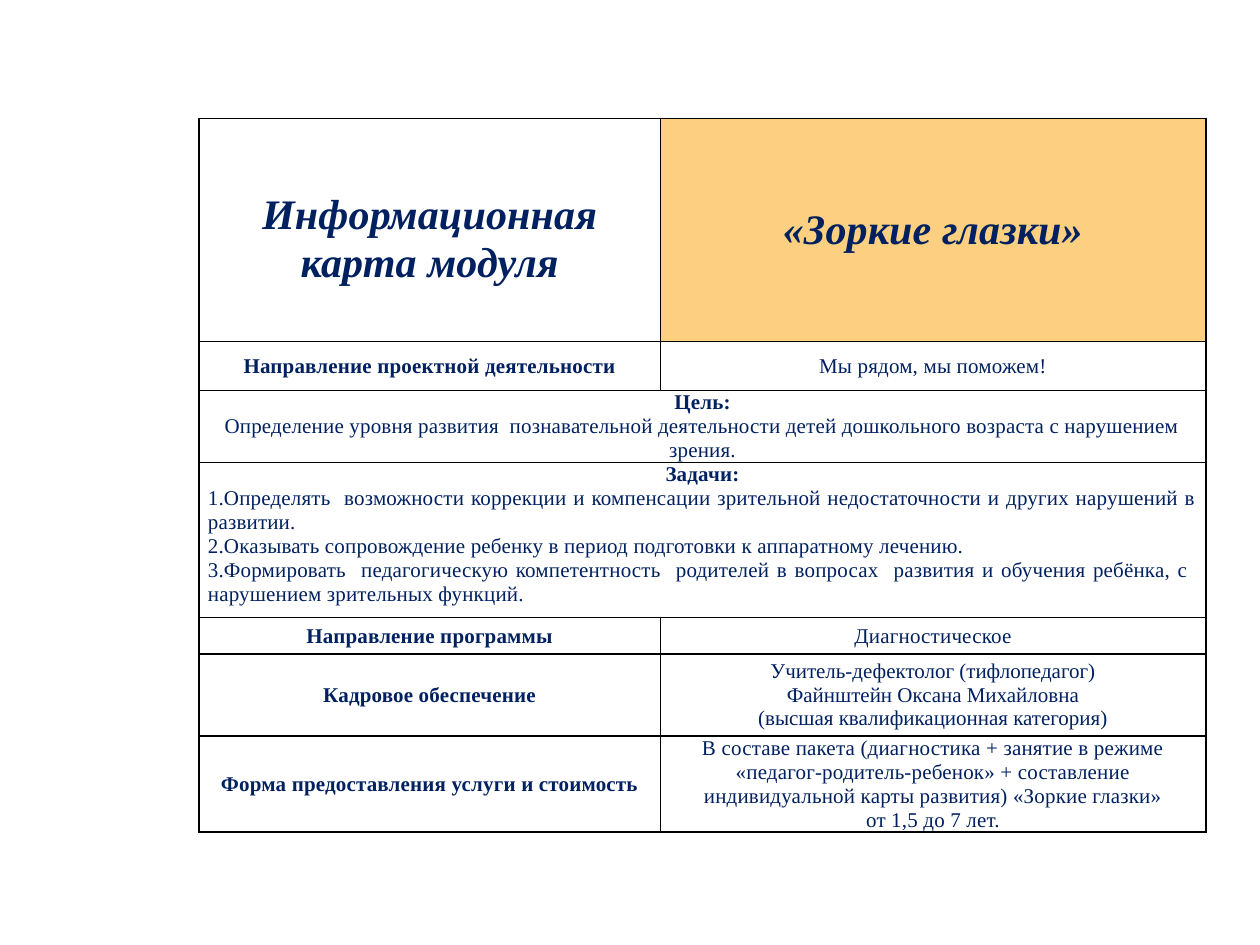
from dataclasses import dataclass

from lxml.etree import SubElement
from pptx import Presentation
from pptx.dml.color import RGBColor
from pptx.enum.text import MSO_ANCHOR as Anchor, PP_ALIGN as Align
from pptx.oxml.ns import qn
from pptx.table import _Cell as Cell
from pptx.util import Pt

FONT = "Times New Roman"
NAVY, BLACK, SAND = "002060", "000000", "FCD080"
LINE = 13.7  # fixed line pitch
HANGING = -18
LEFT, TOP = 113.8, 67.7
COLUMNS = [263.5, 311.8]
ROWS = [127.5, 28, 30.2, 88.5, 21, 46.8, 28]


@dataclass(frozen=True)
class Line:
    text: str
    bold: bool = False
    italic: bool = False
    size: float = 12
    align: Align = Align.CENTER
    before: float = 0
    indent: float = 0


@dataclass(frozen=True)
class Entry:
    row: int
    column: int
    lines: list[Line]
    anchor: Anchor = Anchor.MIDDLE
    top: float = 0
    fill: str = ""
    wide: bool = False
    plain: bool = False  # single spacing, no hanging indent


def title(text: str, before: float = 0, indent: float = 0) -> Line:
    return Line(text, True, True, 24, before=before, indent=indent)


def label(text: str) -> Line:
    return Line(text, bold=True)


def task(text: str) -> Line:
    return Line(text, align=Align.JUSTIFY)


ENTRIES = [
    # Heading row
    Entry(0, 0, [title("Информационная"), title("карта модуля", LINE, 12)],
          Anchor.TOP, top=4 * LINE),
    Entry(0, 1, [title("«Зоркие глазки»")], top=LINE, fill=SAND),
    # Project area
    Entry(1, 0, [label("Направление проектной деятельности")]),
    Entry(1, 1, [Line("Мы рядом, мы поможем!")]),
    # Goal and tasks across both columns
    Entry(2, 0, [
        label("Цель:"),
        Line("Определение уровня развития  познавательной деятельности детей "
             "дошкольного возраста с нарушением зрения."),
    ], Anchor.TOP, wide=True),
    Entry(3, 0, [
        label("Задачи:"),
        task("1.Определять  возможности коррекции и компенсации зрительной "
             "недостаточности и других нарушений в развитии."),
        task("2.Оказывать сопровождение ребенку в период подготовки к "
             "аппаратному лечению."),
        task("3.Формировать  педагогическую компетентность  родителей в "
             "вопросах  развития и обучения ребёнка, с  нарушением "
             "зрительных функций."),
    ], Anchor.TOP, wide=True),
    # Programme, staff and form of service
    Entry(4, 0, [label("Направление программы")]),
    Entry(4, 1, [Line("Диагностическое")]),
    Entry(5, 0, [label("Кадровое обеспечение")]),
    Entry(5, 1, [
        Line("Учитель-дефектолог (тифлопедагог)"),
        Line("Файнштейн Оксана Михайловна"),
        Line("(высшая квалификационная категория)"),
    ], plain=True),
    Entry(6, 0, [label("Форма предоставления услуги и стоимость")]),
    Entry(6, 1, [
        Line("В составе пакета (диагностика + занятие в режиме"),
        Line("«педагог-родитель-ребенок» + составление индивидуальной карты "
             "развития) «Зоркие глазки»"),
        Line("от 1,5 до 7 лет."),
    ]),
]


def color(value: str) -> RGBColor:
    return RGBColor.from_string(value)


def add_borders(cell: Cell) -> None:
    properties = cell._tc.get_or_add_tcPr()
    for place, side in enumerate(("lnL", "lnR", "lnT", "lnB")):
        border = SubElement(properties, qn(f"a:{side}"), w=str(Pt(1)))
        properties.insert(place, border)
        fill = SubElement(border, qn("a:solidFill"))
        SubElement(fill, qn("a:srgbClr"), val=BLACK)


def write_cell(cell: Cell, entry: Entry) -> None:
    cell.vertical_anchor = entry.anchor
    cell.margin_left = cell.margin_right = Pt(5)
    cell.margin_top, cell.margin_bottom = Pt(entry.top), Pt(0)
    if entry.fill:
        cell.fill.solid()
        cell.fill.fore_color.rgb = color(entry.fill)
    frame = cell.text_frame
    for number, line in enumerate(entry.lines):
        para = frame.add_paragraph() if number else frame.paragraphs[0]
        para.alignment = line.align
        if line.before:
            para.space_before = Pt(line.before)
        span = para.add_run()
        span.text = line.text
        font = span.font
        font.name, font.size = FONT, Pt(line.size)
        font.bold, font.italic = line.bold, line.italic
        font.color.rgb = color(NAVY)
        if not entry.plain:
            para.line_spacing = Pt(LINE)
            layout = para._p.get_or_add_pPr()
            layout.set("marL", str(Pt(line.indent)))
            layout.set("indent", str(Pt(HANGING)))
            span._r.get_or_add_rPr().set("spc", "10")


def main() -> None:
    deck = Presentation()
    deck.slide_width, deck.slide_height = Pt(720), Pt(540)
    page = deck.slides.add_slide(deck.slide_layouts[6])
    table = page.shapes.add_table(
        len(ROWS), len(COLUMNS), Pt(LEFT), Pt(TOP),
        Pt(sum(COLUMNS)), Pt(sum(ROWS))).table
    table.first_row = table.horz_banding = False
    for column, width in zip(table.columns, COLUMNS):
        column.width = Pt(width)
    for row, height in zip(table.rows, ROWS):
        row.height = Pt(height)
    for cell in table.iter_cells():
        cell.fill.background()
        add_borders(cell)
    for entry in ENTRIES:
        cell = table.cell(entry.row, entry.column)
        if entry.wide:
            cell.merge(table.cell(entry.row, entry.column + 1))
        write_cell(cell, entry)
    deck.save("out.pptx")


if __name__ == "__main__":
    main()
